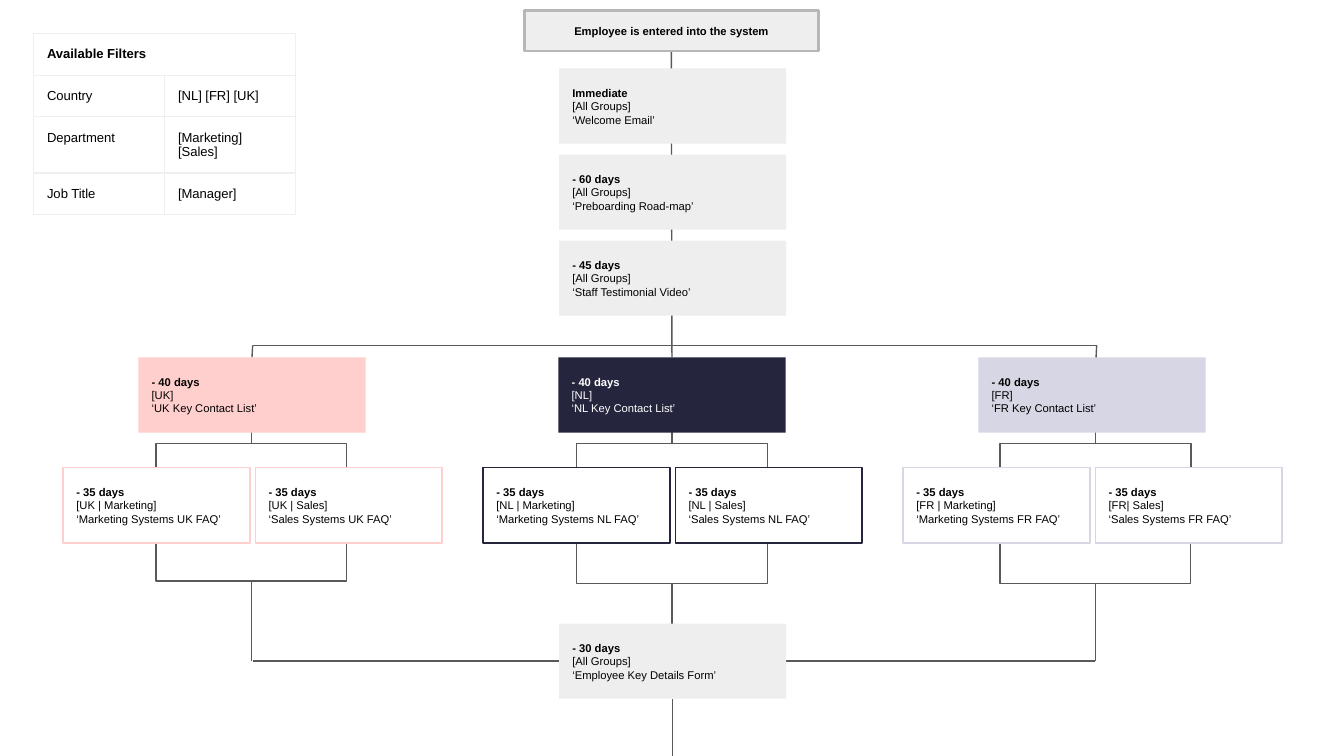
from lxml.etree import SubElement
from pptx import Presentation
from pptx.dml.color import RGBColor
from pptx.enum.shapes import MSO_CONNECTOR as Link, MSO_SHAPE as Shape
from pptx.enum.text import MSO_ANCHOR as Anchor, PP_ALIGN as Align
from pptx.oxml.ns import qn
from pptx.util import Inches, Pt

HUES = {
    "ink": "000000", "white": "FFFFFF", "grey": "EEEEEE", "edge": "B7B7B7",
    "line": "595959", "grid": "EFEFEF", "pink": "FFCFCD", "navy": "26253E",
    "lilac": "D6D6E4",
}
TOP, BOTTOM = 0, 2
WIDE, SLIM, HIGH = 1.69, 1.39, 0.56
FORK = 0.71
TALL = 10 * 9 / 16


def hue(name):
    """Return the named colour."""
    return RGBColor.from_string(HUES[name])


def style(frame, size, color="ink"):
    """Set the font of a text frame, with its first run bold."""
    for para in frame.paragraphs:
        for run in para.runs:
            run.font.size = Pt(size)
            run.font.name = "Arial"
            run.font.bold = False
            run.font.color.rgb = hue(color)
    frame.paragraphs[0].runs[0].font.bold = True


def add_box(slide, box, text, fill, edge=None, width=0.75, color="ink"):
    """Add a rectangle whose first line is bold."""
    shape = slide.shapes.add_shape(Shape.RECTANGLE, *map(Inches, box))
    shape.shadow.inherit = False
    shape.fill.solid()
    shape.fill.fore_color.rgb = hue(fill)
    if edge:
        shape.line.color.rgb = hue(edge)
        shape.line.width = Pt(width)
    else:
        shape.line.fill.background()
    frame = shape.text_frame
    frame.word_wrap = True
    frame.vertical_anchor = Anchor.MIDDLE
    frame.margin_left = frame.margin_right = Inches(0.1)
    frame.margin_top = frame.margin_bottom = Inches(0.1)
    frame.text = text
    for para in frame.paragraphs:
        para.alignment = Align.LEFT
    style(frame, 6, color)
    return shape


def add_step(slide, box, when, group, title, fill, edge=None, color="ink"):
    """Add one message of the schedule."""
    text = f"{when}\v[{group}]\n‘{title}’"
    return add_box(slide, box, text, fill, edge, color=color)


def add_line(slide, start, end, kind=Link.STRAIGHT):
    """Add a plain grey connector."""
    line = slide.shapes.add_connector(kind, *map(Inches, start + end))
    line.line.color.rgb = hue("line")
    line.line.width = Pt(0.75)
    SubElement(line._element.spPr, qn("a:effectLst"))
    return line


def add_bend(slide, start, end, turn):
    """Add an elbow that leaves its start vertically."""
    (x1, y1), (x2, y2) = start, end
    wide, high = abs(y2 - y1), abs(x2 - x1)
    left, top = (x1 + x2 - wide) / 2, (y1 + y2 - high) / 2
    bend = add_line(slide, (left, top), (left + wide, top + high), Link.ELBOW)
    right, down = x2 > x1, y2 > y1
    xfrm = bend._element.spPr.find(qn("a:xfrm"))
    xfrm.set("rot", str((270 if right else 90) * 60000))
    if right == down:
        xfrm.set("flipH", "1")
    geom = bend._element.spPr.find(qn("a:prstGeom"))
    guides = geom.find(qn("a:avLst"))
    if guides is None:
        guides = SubElement(geom, qn("a:avLst"))
    SubElement(guides, qn("a:gd"), name="adj1", fmla=f"val {round(turn * 100000)}")


def add_forks(slide, axis, turn):
    """Split a branch above its two steps and merge it below."""
    for side in (-FORK, FORK):
        add_bend(slide, (axis, 3.12), (axis + side, 3.48), 0.5)
        add_bend(slide, (axis, 4.92), (axis + side, 4.04), turn)


def add_branch(slide, left, top, land, tint, color, sales):
    """Add a country step and its two department steps; return the first."""
    head = add_step(slide, (left + 0.56, top, WIDE, HIGH), "- 40 days", land,
                    f"{land} Key Contact List", tint, color=color)
    teams = (("Marketing", f"{land} | Marketing"), ("Sales", sales))
    for i, (team, group) in enumerate(teams):
        box = (left + 1.43 * i, top + 0.82, SLIM, HIGH)
        add_step(slide, box, "- 35 days", group,
                 f"{team} Systems {land} FAQ", "white", tint)
    return head


def add_trunk(slide, left, top):
    """Add the three steps that all groups share."""
    steps = (("Immediate", "Welcome Email"), ("- 60 days", "Preboarding Road-map"),
             ("- 45 days", "Staff Testimonial Video"))
    for i, (when, title) in enumerate(steps):
        add_step(slide, (left, top + 0.64 * i, WIDE, HIGH), when,
                 "All Groups", title, "grey")


def add_filters(slide, box):
    """Add the table of filters."""
    rows = (("Available Filters", ""), ("Country", "[NL] [FR] [UK]"),
            ("Department", "[Marketing] [Sales]"), ("Job Title", "[Manager]"))
    table = slide.shapes.add_table(len(rows), 2, *map(Inches, box)).table
    table.first_row = table.horz_banding = False
    for col in table.columns:
        col.width = Inches(box[2] / 2)
    for row, high in zip(table.rows, (0.31, 0.31, 0.41, 0.31)):
        row.height = Inches(high)
    table.cell(0, 0).merge(table.cell(0, 1))
    for r, row in enumerate(rows):
        for c, text in enumerate(row):
            cell = table.cell(r, c)
            cell.margin_left = cell.margin_right = Inches(0.1)
            cell.margin_top = cell.margin_bottom = Inches(0.1)
            props = cell._tc.get_or_add_tcPr()
            for side in ("lnL", "lnR", "lnT", "lnB"):
                rim = SubElement(props, qn(f"a:{side}"), w=str(Pt(0.75)))
                solid = SubElement(rim, qn("a:solidFill"))
                SubElement(solid, qn("a:srgbClr"), val=HUES["grid"])
            cell.fill.background()
            if text:
                cell.text = text
                style(cell.text_frame, 7)
                cell.text_frame.paragraphs[0].runs[0].font.bold = r == 0


def add_flow(slide):
    """Add the whole flow, lines first."""
    trunk = add_line(slide, (5, 0.38), (5, 2.66))
    drop = add_line(slide, (1.88, 2.57), (1.88, 2.66))
    add_line(slide, (8.16, 2.57), (8.15, 2.76))
    mid = 4.16 + WIDE / 2
    tail = add_line(slide, (mid, 5.2), (mid, TALL))
    add_line(slide, (1.88, 2.57), (8.16, 2.57))
    add_line(slide, (1.88, 4.92), (8.15, 4.92))
    for axis, turn in ((1.87, 0.68), (5, 0.66), (8.15, 0.66)):
        add_forks(slide, axis, turn)
    start = add_box(slide, (3.9, 0.08, 2.19, 0.3),
                    "Employee is entered into the system", "grey", "edge", 1.5)
    start.text_frame.paragraphs[0].alignment = Align.CENTER
    add_trunk(slide, 4.16, 0.51)
    lands = (("UK", "pink", "ink", "UK | Sales"), ("NL", "navy", "white", "NL | Sales"),
             ("FR", "lilac", "ink", "FR| Sales"))
    heads = [add_branch(slide, 0.47 + 3.125 * i, 2.66, *land)
             for i, land in enumerate(lands)]
    last = add_step(slide, (4.16, 4.64, WIDE, HIGH), "- 30 days", "All Groups",
                    "Employee Key Details Form", "grey")
    trunk.begin_connect(start, BOTTOM)
    trunk.end_connect(heads[1], TOP)
    drop.end_connect(heads[0], TOP)
    tail.begin_connect(last, BOTTOM)


def main():
    """Build and save the slide."""
    deck = Presentation()
    deck.slide_width, deck.slide_height = Inches(10), Inches(TALL)
    slide = deck.slides.add_slide(deck.slide_layouts[6])
    add_flow(slide)
    add_filters(slide, (0.25, 0.25, 1.95, 1.34))
    deck.save("out.pptx")


if __name__ == "__main__":
    main()
